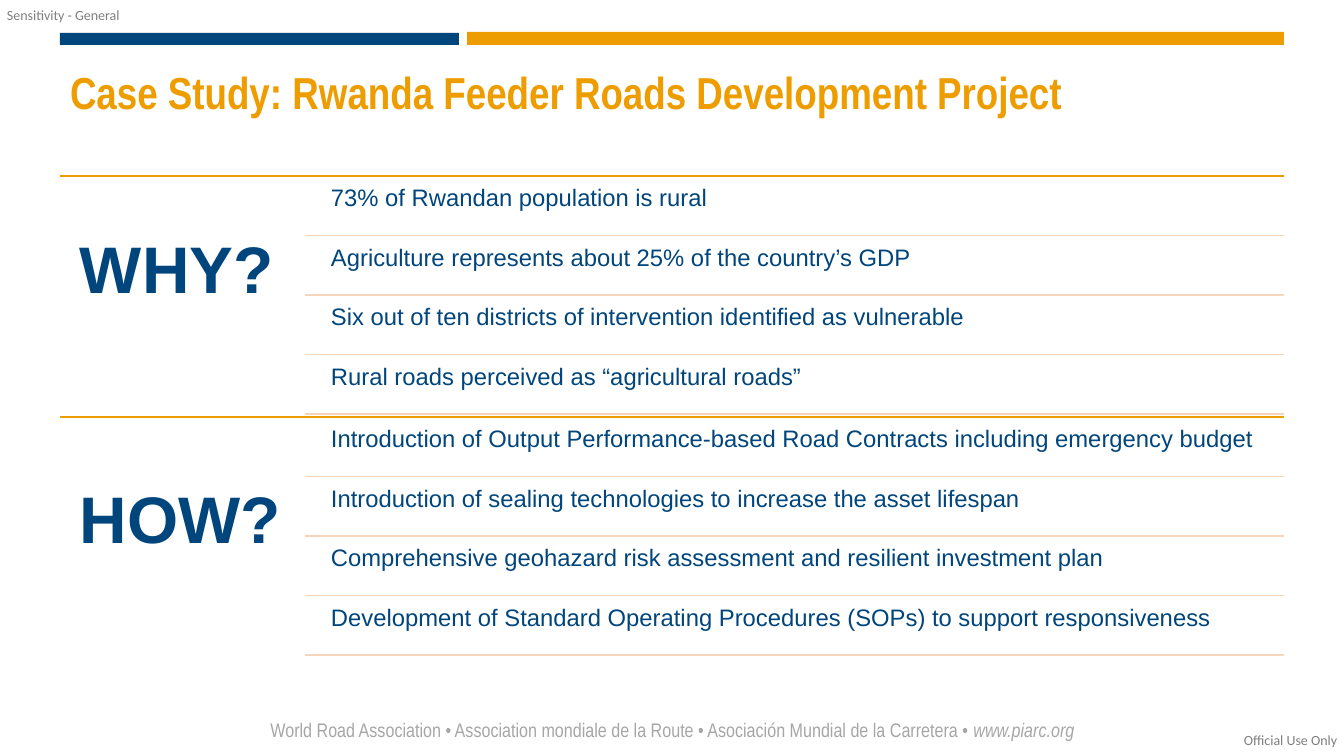
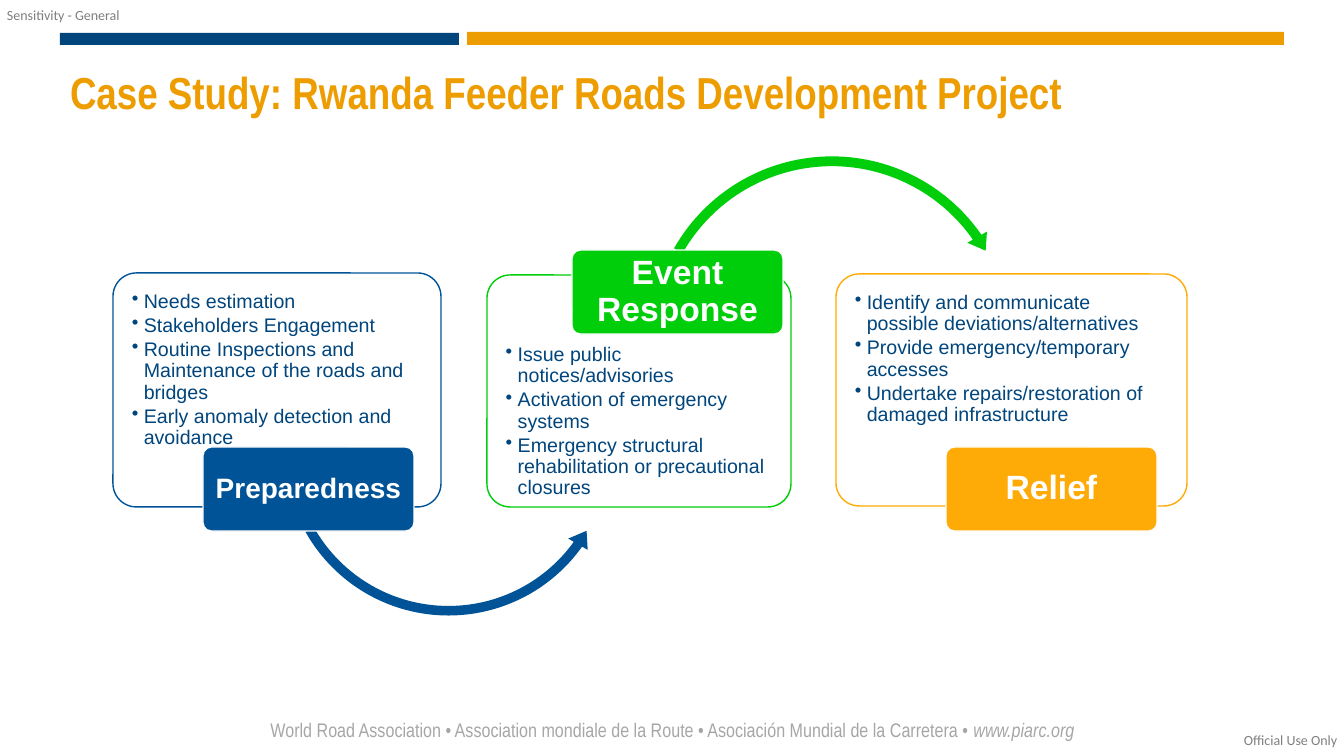
from dataclasses import dataclass

from lxml import etree
from pptx import Presentation
from pptx.dml.color import RGBColor
from pptx.enum.shapes import MSO_CONNECTOR, MSO_SHAPE
from pptx.enum.text import MSO_ANCHOR, PP_ALIGN
from pptx.oxml.ns import qn
from pptx.util import Emu, Pt

RECT, ROUNDED = MSO_SHAPE.RECTANGLE, MSO_SHAPE.ROUNDED_RECTANGLE
ARC_OVER, ARC_UNDER = MSO_SHAPE.CIRCULAR_ARROW, MSO_SHAPE.LEFT_CIRCULAR_ARROW
STRAIGHT = MSO_CONNECTOR.STRAIGHT
LEFT, CENTER = PP_ALIGN.LEFT, PP_ALIGN.CENTER
TOP, MIDDLE = MSO_ANCHOR.TOP, MSO_ANCHOR.MIDDLE


@dataclass(frozen=True)
class Theme:
    navy: str = "00457C"
    orange: str = "ED9D00"
    blue: str = "005396"
    green: str = "00CE0B"
    amber: str = "FFAB07"
    peach: str = "F6D5BD"
    white: str = "FFFFFF"
    footer_gray: str = "A6A6A6"
    label_gray: str = "7F7F7F"
    body_font: str = "Arial"
    narrow_font: str = "Arial Narrow"
    label_font: str = "Calibri"
    title_size: int = 32
    question_size: int = 47
    answer_size: int = 17
    bullet_size: int = 14
    footer_size: int = 14
    label_size: int = 10


THEME = Theme()
TITLE = "Case Study: Rwanda Feeder Roads Development Project"
TITLE_BOX = (60, 66, 1224, 89)
FOOTER = (
    "World Road Association • Association mondiale de la Route • "
    "Asociación Mundial de la Carretera • "
)
FOOTER_SITE = "www.piarc.org"
FOOTER_BOX = (61, 713, 1223, 34)
BANDS = [((60, 33, 399, 12), THEME.navy), ((467, 32, 817, 13), THEME.orange)]
LABELS = [
    ("Sensitivity - General", (7, 7, 120, 17)),
    ("Official Use Only", (1244, 732, 100, 17)),
]

# question, top of the section, offset of the question below it, answers
SECTIONS = [
    ("WHY?", 176, 41, [
        "73% of Rwandan population is rural",
        "Agriculture represents about 25% of the country’s GDP",
        "Six out of ten districts of intervention identified as vulnerable",
        "Rural roads perceived as “agricultural roads”",
    ]),
    ("HOW?", 417, 50, [
        "Introduction of Output Performance-based Road Contracts including emergency budget",
        "Introduction of sealing technologies to increase the asset lifespan",
        "Comprehensive geohazard risk assessment and resilient investment plan",
        "Development of Standard Operating Procedures (SOPs) to support responsiveness",
    ]),
]
SECTION_LEFT, ANSWER_RULE_LEFT, SECTION_RIGHT = 60, 305, 1284
ANSWER_LEFT, ANSWER_WIDTH, SECTION_HEIGHT = 324, 960, 238

PHASES = [
    dict(name="Preparedness", size=20, color=THEME.blue,
         card=(113, 273, 328, 234), text_top=12, tag=(203, 447),
         points=["Needs estimation", "Stakeholders Engagement",
                 "Routine Inspections and Maintenance of the roads and bridges",
                 "Early anomaly detection and avoidance"],
         arrow=dict(kind=ARC_UNDER, box=(278, 281, 341, 341), thickness=2.8,
                    angles=(5.75, 35.61, 150.68), head=3.3)),
    dict(name="Event Response", size=24, color=THEME.green,
         card=(487, 275, 304, 232), text_top=63, tag=(572, 250),
         points=["Issue public notices/advisories",
                 "Activation of emergency systems",
                 "Emergency structural rehabilitation or precautional closures"],
         arrow=dict(kind=ARC_OVER, box=(644, 150, 376, 376), thickness=2.6,
                    angles=(5.18, 325.22, 209.59), head=3)),
    dict(name="Relief", size=24, color=THEME.amber,
         card=(836, 274, 351, 232), text_top=12, tag=(946, 447),
         points=["Identify and communicate possible deviations/alternatives",
                 "Provide emergency/temporary accesses",
                 "Undertake repairs/restoration of damaged infrastructure"],
         arrow=None),
]
TAG_SIZE = (211, 84)
CORNER = 0.1
BULLET_INDENT = 12


def px(length):
    return Emu(round(length * 914400 / 100.8))


def rgb(color):
    return RGBColor.from_string(color)


def style_text(paragraph, font, size, color, bold=False, align=LEFT, spacing=None):
    paragraph.alignment = align
    paragraph.line_spacing = spacing
    paragraph.font.name = font
    paragraph.font.size = Pt(size)
    paragraph.font.bold = bold
    paragraph.font.color.rgb = rgb(color)


def set_frame(frame, insets, anchor=TOP):
    """Wrap the text; insets are left, top, right, bottom in px."""
    frame.word_wrap = True
    frame.vertical_anchor = anchor
    (frame.margin_left, frame.margin_top,
     frame.margin_right, frame.margin_bottom) = map(px, insets)


def add_text(slide, box, text, inset, *style, **options):
    frame = slide.shapes.add_textbox(*map(px, box)).text_frame
    set_frame(frame, (inset,) * 4)
    paragraph = frame.paragraphs[0]
    paragraph.text = text
    style_text(paragraph, *style, **options)
    return paragraph


def add_block(slide, kind, box, fill, outline=None):
    block = slide.shapes.add_shape(kind, *map(px, box))
    block.shadow.inherit = False
    block.fill.solid()
    block.fill.fore_color.rgb = rgb(fill)
    if outline:
        block.line.color.rgb = rgb(outline)
        block.line.width = Pt(1)
    else:
        block.line.fill.background()
    return block


def add_rule(slide, left, y, color):
    rule = slide.shapes.add_connector(
        STRAIGHT, px(left), px(y), px(SECTION_RIGHT), px(y))
    rule.line.color.rgb = rgb(color)
    rule.line.width = Pt(1)
    etree.SubElement(rule.element.spPr, qn("a:effectLst"))


def add_titled_slide(prs, layout):
    slide = prs.slides.add_slide(layout)
    title = slide.shapes.title
    title.left, title.top, title.width, title.height = map(px, TITLE_BOX)
    title.text = TITLE
    set_frame(title.text_frame, (10, 5, 10, 5))
    style_text(title.text_frame.paragraphs[0], THEME.narrow_font, THEME.title_size,
               THEME.orange, bold=True, spacing=0.9)
    return slide


def furnish_layout(layout, slide):
    """Draw the bands, footer and labels on the slide, then move them to its layout."""
    for placeholder in list(layout.placeholders)[1:]:
        layout.shapes.element.remove(placeholder.element)
    already_there = len(slide.shapes)
    for box, color in BANDS:
        add_block(slide, RECT, box, color)
    footer = add_text(slide, FOOTER_BOX, FOOTER, 5, THEME.narrow_font,
                      THEME.footer_size, THEME.footer_gray, align=CENTER)
    site = footer.add_run()
    site.text = FOOTER_SITE
    site.font.italic = True
    for text, box in LABELS:
        add_text(slide, box, text, 0, THEME.label_font, THEME.label_size,
                 THEME.label_gray)
    for shared in list(slide.shapes)[already_there:]:
        layout.shapes.element.append(shared.element)


def add_section(slide, question, top, question_offset, answers):
    add_rule(slide, SECTION_LEFT, top, THEME.orange)
    add_text(slide, (SECTION_LEFT, top + question_offset, 245, 125), question, 20,
             THEME.body_font, THEME.question_size, THEME.navy, bold=True, spacing=0.9)
    pitch = SECTION_HEIGHT / len(answers)
    for row, answer in enumerate(answers):
        y = top + row * pitch
        add_text(slide, (ANSWER_LEFT, y + 3, ANSWER_WIDTH, 56), answer, 7,
                 THEME.body_font, THEME.answer_size, THEME.navy, spacing=0.9)
        add_rule(slide, ANSWER_RULE_LEFT, y + pitch, THEME.peach)


def add_points(frame, points):
    for index, point in enumerate(points):
        paragraph = frame.add_paragraph() if index else frame.paragraphs[0]
        paragraph.text = point
        properties = paragraph._p.get_or_add_pPr()
        properties.set("marL", str(px(BULLET_INDENT)))
        properties.set("indent", str(-px(BULLET_INDENT)))
        etree.SubElement(properties, qn("a:buChar"), char="•")
        style_text(paragraph, THEME.body_font, THEME.bullet_size, THEME.navy,
                   spacing=0.9)
        paragraph.space_after = Pt(2)


def add_arc(slide, color, kind, box, thickness, angles, head):
    """Thickness and head are percentages; angles are head sweep, end and start in degrees."""
    arc = add_block(slide, kind, box, color)
    values = [thickness / 100, *(angle * 0.6 for angle in angles), head / 100]
    for index, value in enumerate(values):
        arc.adjustments[index] = value


def add_phase(slide, phase):
    color = phase["color"]
    card = add_block(slide, ROUNDED, phase["card"], THEME.white, color)
    card.adjustments[0] = CORNER
    set_frame(card.text_frame, (12, phase["text_top"], 12, 0))
    add_points(card.text_frame, phase["points"])
    if phase["arrow"]:
        add_arc(slide, color, **phase["arrow"])
    tag = add_block(slide, ROUNDED, phase["tag"] + TAG_SIZE, color, THEME.white)
    tag.adjustments[0] = CORNER
    set_frame(tag.text_frame, (4, 3, 4, 3), MIDDLE)
    name = tag.text_frame.paragraphs[0]
    name.text = phase["name"]
    style_text(name, THEME.body_font, phase["size"], THEME.white, bold=True,
               align=CENTER, spacing=0.9)


def main():
    prs = Presentation()
    prs.slide_width, prs.slide_height = px(1344), px(756)
    layout = prs.slide_layouts.get_by_name("Title Only")

    questions = add_titled_slide(prs, layout)
    furnish_layout(layout, questions)
    for section in SECTIONS:
        add_section(questions, *section)

    process = add_titled_slide(prs, layout)
    for phase in PHASES:
        add_phase(process, phase)

    prs.save("out.pptx")


if __name__ == "__main__":
    main()
